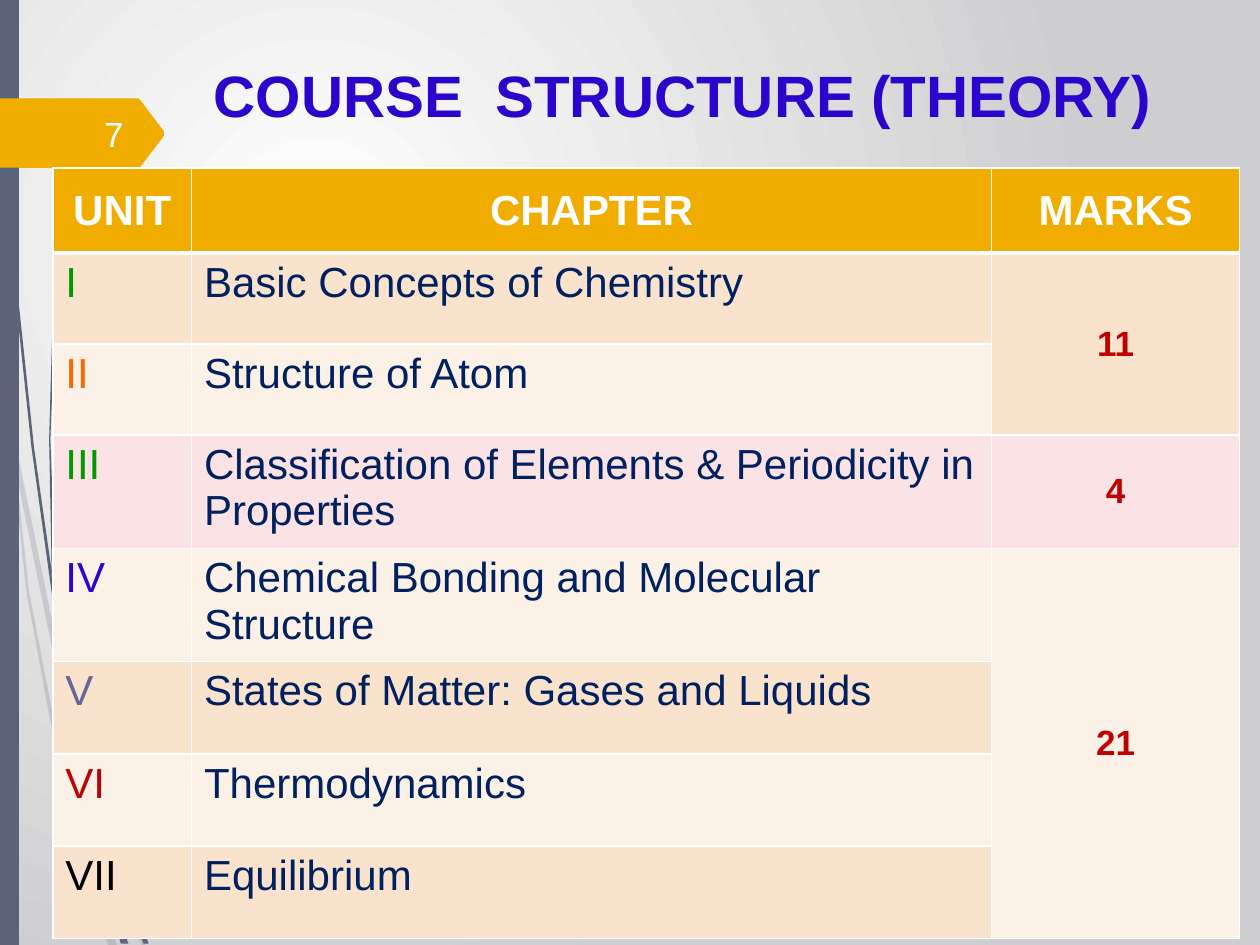
from lxml.etree import SubElement
from pptx import Presentation
from pptx.dml.color import RGBColor
from pptx.enum.shapes import MSO_SHAPE
from pptx.enum.text import MSO_ANCHOR, MSO_AUTO_SIZE, PP_ALIGN
from pptx.oxml import parse_xml
from pptx.oxml.ns import nsdecls, qn
from pptx.util import Pt

SLATE = RGBColor(0x5A, 0x63, 0x78)
GOLD = RGBColor(0xF0, 0xAD, 0x00)
WHITE = RGBColor(0xFF, 0xFF, 0xFF)
GREY = RGBColor(0xCE, 0xCE, 0xD0)
BLUE = RGBColor(0x2B, 0x05, 0xCB)
NAVY = RGBColor(0x00, 0x20, 0x60)
RED = RGBColor(0xC0, 0x00, 0x00)
GREEN = RGBColor(0x00, 0x99, 0x00)
ORANGE = RGBColor(0xFF, 0x66, 0x00)
VIOLET = RGBColor(0x66, 0x66, 0x99)
BLACK = RGBColor(0, 0, 0)
SAND = RGBColor(0xF9, 0xE3, 0xCC)
CREAM = RGBColor(0xFC, 0xF1, 0xE7)
PINK = RGBColor(0xFA, 0xE2, 0xE5)
FONT = "Arial"
STEP = Pt(0.72)  # grid unit of the outlines

# Wisps of grass: outlines in grid units from the slide corner
PALE = [
    [(8, 350), (6, 322), (0, 282), (0, 299), (8, 344)],
    [(43, 522), (63, 599), (64, 586), (47, 520), (11, 345), (13, 376)],
    [(69, 607), (66, 596), (66, 610), (92, 694), (113, 751), (116, 751), (95, 692)],
    [(89, 751), (93, 751), (79, 711)],
    [(70, 683), (52, 619), (23, 469), (13, 376), (8, 350), (21, 470), (49, 621),
     (69, 693), (76, 714), (74, 707)],
    [(63, 599), (65, 646), (70, 683), (72, 692), (79, 711), (78, 706), (68, 646),
     (66, 610), (66, 608)],
    [(66, 584), (83, 462), (120, 349), (171, 245), (201, 198), (217, 175), (234, 154),
     (234, 153), (217, 175), (201, 197), (171, 244), (118, 348), (81, 461), (64, 584),
     (64, 586), (66, 596)],
    [(76, 714), (86, 751), (89, 751)],
    [(66, 608), (66, 610), (66, 596), (64, 586), (63, 599)],
    [(72, 692), (70, 683), (74, 707), (76, 714), (89, 751), (79, 711)],
]
DARK = [
    [(5, 110), (12, 233), (25, 355), (42, 477), (43, 481), (41, 457), (41, 453),
     (27, 355), (14, 232), (6, 109), (3, 48), (3, 0), (2, 0), (3, 48)],
    [(66, 592), (80, 645), (80, 631), (70, 590), (45, 472), (48, 505)],
    [(85, 649), (83, 641), (83, 656), (99, 708), (114, 749), (118, 749), (102, 706)],
    [(83, 691), (73, 657), (54, 556), (48, 505), (43, 477), (51, 557), (70, 659),
     (83, 708), (88, 722), (87, 717)],
    [(45, 472), (44, 453), (40, 349), (44, 245), (47, 193), (53, 141), (52, 141),
     (46, 193), (42, 245), (39, 349), (41, 449)],
    [(100, 749), (102, 749), (91, 719)],
    [(43, 477), (48, 505), (45, 472), (41, 449), (41, 453)],
    [(83, 633), (94, 552), (119, 476), (153, 406), (173, 374), (184, 359), (196, 344),
     (195, 344), (184, 358), (173, 373), (153, 405), (117, 474), (92, 551), (80, 631),
     (83, 641)],
    [(88, 722), (96, 749), (98, 749)],
    [(80, 645), (83, 691), (87, 706), (91, 719), (90, 716), (83, 656), (81, 651)],
    [(80, 645), (81, 651), (83, 656), (83, 641), (80, 631)],
    [(87, 706), (83, 691), (87, 717), (88, 722), (98, 749), (100, 749), (91, 719)],
]
TAG = [(0, 0), (110, 0), (111, 1), (130, 26), (130, 30), (111, 55), (110, 56), (0, 55)]

HEADS = ["UNIT", "CHAPTER", "MARKS"]
UNITS = [  # unit, its colour, chapter, row fill
    ("I", GREEN, "Basic Concepts of Chemistry", SAND),
    ("II", ORANGE, "Structure of Atom", CREAM),
    ("III", GREEN, "Classification of Elements & Periodicity in Properties", PINK),
    ("IV", BLUE, "Chemical Bonding and Molecular Structure", CREAM),
    ("V", VIOLET, "States of Matter: Gases and Liquids", SAND),
    ("VI", RED, "Thermodynamics", CREAM),
    ("VII", BLACK, "Equilibrium", SAND),
]
MARKS = [(1, 2, "11"), (3, 3, "4"), (4, 7, "21")]  # first row, last row, marks
WIDTHS = [79.2, 457.2, 141.8]
HEIGHTS = [48.5, 52, 52, 64, 64, 52.7, 52.7, 52.7]


def paint(shape, color):
    shape.fill.solid()
    shape.fill.fore_color.rgb = color
    shape.line.fill.background()
    shape.shadow.inherit = False


def outline(slide, points, left, top, color):
    pen = slide.shapes.build_freeform(*points[0], scale=STEP)
    pen.add_line_segments(points[1:], close=True)
    shape = pen.convert_to_shape(Pt(left), Pt(top))
    paint(shape, color)
    return shape


def style(para, size, color, bold=False, align=PP_ALIGN.LEFT):
    para.alignment = align
    font = para.font
    font.name, font.size, font.bold = FONT, Pt(size), bold
    font.color.rgb = color


def backdrop(slide):
    fill = slide.background.fill
    fill.gradient()
    for stop, color in zip(fill.gradient_stops, (WHITE, GREY)):
        stop.color.rgb = color
    # Turn the linear blend into a circular one
    grad = slide.element.find(".//" + qn("a:gradFill"))
    grad.remove(grad.find(qn("a:lin")))
    ring = SubElement(grad, qn("a:path"), path="circle")
    SubElement(ring, qn("a:fillToRect"), l="50000", t="50000", r="100000", b="100000")


def border(slide, left, top, width, height):
    for points in PALE:
        wisp = outline(slide, points, left, top, SLATE)
        tint = wisp.element.spPr.find(".//" + qn("a:srgbClr"))
        SubElement(tint, qn("a:alpha"), val="20000")
    for points in DARK:
        outline(slide, points, left, top, SLATE)
    bar = slide.shapes.add_shape(MSO_SHAPE.RECTANGLE, Pt(left), Pt(top), Pt(width), Pt(height))
    paint(bar, SLATE)


def number(slide, left, top, text):
    outline(slide, TAG, left, top, GOLD)
    box = slide.shapes.add_textbox(Pt(left + 31.7), Pt(top + 5.8), Pt(46), Pt(28.8))
    frame = box.text_frame
    frame.word_wrap = True
    frame.vertical_anchor = MSO_ANCHOR.MIDDLE
    frame.text = text
    style(frame.paragraphs[0], 20, WHITE, align=PP_ALIGN.RIGHT)


def heading(slide, left, top, width, height, text):
    title = slide.shapes.title
    title.left, title.top = Pt(left), Pt(top)
    title.width, title.height = Pt(width), Pt(height)
    frame = title.text_frame
    frame.text = text
    frame.word_wrap = True
    frame.auto_size = MSO_AUTO_SIZE.NONE
    frame.vertical_anchor = MSO_ANCHOR.TOP
    style(frame.paragraphs[0], 33.3, BLUE, True, PP_ALIGN.CENTER)


def edge(cell, base):
    props = cell._tc.get_or_add_tcPr()
    for spot, side in enumerate("LRTB"):
        line = parse_xml(
            f'<a:ln{side} {nsdecls("a")} w="{Pt(base if side == "B" else 1)}">'
            f'<a:solidFill><a:srgbClr val="{WHITE}"/></a:solidFill></a:ln{side}>')
        props.insert(spot, line)


def write(cell, text, size, color, bold=False):
    cell.text = text
    align = PP_ALIGN.CENTER if bold else PP_ALIGN.LEFT
    cell.vertical_anchor = MSO_ANCHOR.MIDDLE if bold else MSO_ANCHOR.TOP
    style(cell.text_frame.paragraphs[0], size, color, bold, align)


def course(slide, left, top):
    table = slide.shapes.add_table(
        len(HEIGHTS), len(WIDTHS), Pt(left), Pt(top),
        Pt(sum(WIDTHS)), Pt(sum(HEIGHTS))).table
    for col, width in zip(table.columns, WIDTHS):
        col.width = Pt(width)
    for row, height in zip(table.rows, HEIGHTS):
        row.height = Pt(height)
    # Fills and borders
    fills = [GOLD] + [unit[3] for unit in UNITS]
    for r, fill in enumerate(fills):
        for c in range(len(WIDTHS)):
            cell = table.cell(r, c)
            cell.fill.solid()
            cell.fill.fore_color.rgb = fill
            edge(cell, 1 if r else 3)
    # Wording
    for c, text in enumerate(HEADS):
        write(table.cell(0, c), text, 24, WHITE, True)
    for r, (unit, color, chapter, _) in enumerate(UNITS, 1):
        write(table.cell(r, 0), unit, 24, color)
        write(table.cell(r, 1), chapter, 24, NAVY)
    for first, last, text in MARKS:
        cell = table.cell(first, 2)
        if last > first:
            cell.merge(table.cell(last, 2))
        write(cell, text, 20, RED, True)


def main():
    deck = Presentation()
    deck.slide_width, deck.slide_height = Pt(720), Pt(540)
    slide = deck.slides.add_slide(deck.slide_layouts[5])
    backdrop(slide)
    border(slide, 0, 0, 10.8, 540)
    number(slide, 0, 56.2, "7")
    course(slide, 30.2, 96)
    heading(slide, 102.2, 30.2, 576, 66.2, "COURSE  STRUCTURE (THEORY)")
    deck.save("out.pptx")


if __name__ == "__main__":
    main()
